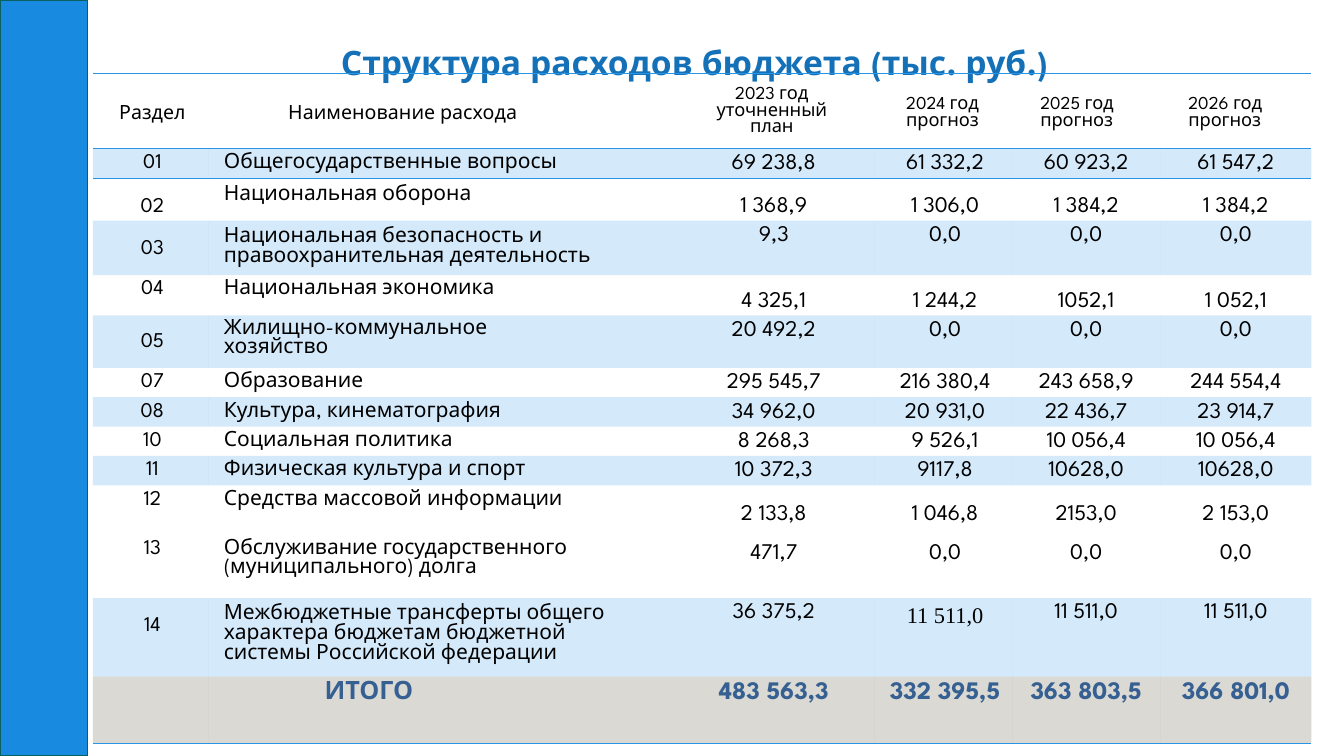
from lxml.etree import SubElement
from pptx import Presentation
from pptx.dml.color import RGBColor
from pptx.enum.shapes import MSO_SHAPE as SHAPE
from pptx.enum.text import MSO_ANCHOR as ANCHOR, PP_ALIGN as ALIGN
from pptx.oxml.ns import qn
from pptx.util import Cm, Pt

PANEL = RGBColor(0x18, 0x8A, 0xE0)
PANEL_EDGE = RGBColor(0x0A, 0x5F, 0x5F)
TITLE_BLUE = RGBColor(0x15, 0x71, 0xB7)
BAND = RGBColor(0x29, 0x95, 0xE7)
TOTAL_FILL = RGBColor(0x4A, 0x45, 0x2A)
TOTAL_TEXT = RGBColor(0x37, 0x60, 0x92)
BLACK = RGBColor(0, 0, 0)
FONT = "League Spartan"
NO_STYLE = "{2D5ABB26-0587-4C30-8999-92F81FD0307C}"

TITLE = "Структура расходов бюджета (тыс. руб.)"
COL_WIDTHS = [2.92, 11.71, 5.05, 3.48, 3.73, 3.81]
HEADER_HEIGHT, TOTAL_HEIGHT = 1.9, 1.68
HEADERS = [
    ("Раздел", dict(size=14, align=ALIGN.CENTER, top=0.81, left=0.08)),
    ("Наименование расхода", dict(size=14, top=0.81, left=2)),
    ("2023 год уточненный план",
     dict(size=13, align=ALIGN.CENTER, top=0.33, left=0.69, right=0.79)),
    ("2024 год\nпрогноз", dict(size=13, top=0.58, left=0.81)),
    ("2025 год\nпрогноз", dict(size=13, top=0.58, left=0.71)),
    ("2026 год\nпрогноз", dict(size=13, top=0.58, left=0.71)),
]
# height, top insets of section, name and values, section, name, values
ROWS = [
    (0.74, (0.13, 0.13, 0.13), "01", "Общегосударственные вопросы",
     ["69 238,8", "61 332,2", "60 923,2", "61 547,2"]),
    (1.07, (0.48, 0.18, 0.48), "02", "Национальная оборона",
     ["1 368,9", "1 306,0", "1 384,2", "1 384,2"]),
    (1.37, (0.48, 0.18, 0.13), "03",
     "Национальная безопасность и правоохранительная деятельность",
     ["9,3", "0,0", "0,0", "0,0"]),
    (1.02, (0.13, 0.13, 0.43), "04", "Национальная экономика",
     ["4 325,1", "1 244,2", "1052,1", "1 052,1"]),
    (1.32, (0.43, 0.1, 0.13), "05", "Жилищно-коммунальное хозяйство",
     ["20 492,2", "0,0", "0,0", "0,0"]),
    (0.74, (0.13, 0.13, 0.13), "07", "Образование",
     ["295 545,7", "216 380,4", "243 658,9", "244 554,4"]),
    (0.74, (0.13, 0.13, 0.13), "08", "Культура, кинематография",
     ["34 962,0", "20 931,0", "22 436,7", "23 914,7"]),
    (0.74, (0.13, 0.13, 0.13), "10", "Социальная политика",
     ["8 268,3", "9 526,1", "10 056,4", "10 056,4"]),
    (0.74, (0.13, 0.13, 0.13), "11", "Физическая культура и спорт",
     ["10 372,3", "9117,8", "10628,0", "10628,0"]),
    (2.84, (0.13, 0.13, 0.48), "12\n13",
     "Средства массовой информации\n"
     "Обслуживание государственного (муниципального) долга",
     ["2 133,8\n471,7", "1 046,8\n0,0", "2153,0\n0,0", "2 153,0\n0,0"]),
    (1.98, (0.48, 0.18, 0.13), "14",
     "Межбюджетные трансферты общего характера бюджетам бюджетной "
     "системы Российской федерации",
     ["36 375,2", "11 511,0", "11 511,0", "11 511,0"]),
]
NAME_RIGHT = {"05": 3}
VALUE_FONTS = {("14", 1): "Times New Roman"}
TOTAL_LABEL = "ИТОГО"
TOTALS = ["483 563,3", "332 395,5", "363 803,5", "366 801,0"]


def write(box, text, size=15, color=BLACK, bold=False, font=FONT,
          align=ALIGN.LEFT, gap=0, top=0.13, left=0, right=0):
    tf = box.text_frame
    target = box if hasattr(box, "margin_top") else tf
    target.margin_top, target.margin_bottom = Cm(top), 0
    target.margin_left, target.margin_right = Cm(left), Cm(right)
    target.vertical_anchor = ANCHOR.TOP
    tf.word_wrap = True
    for i, line in enumerate(text.split("\n")):
        p = tf.add_paragraph() if i else tf.paragraphs[0]
        p.alignment = align
        p.line_spacing = 1.0
        p.space_before = Pt(gap if i else 0)
        r = p.add_run()
        r.text = line
        r.font.name, r.font.size, r.font.bold = font, Pt(size), bold
        r.font.color.rgb = color


def tint(cell, color):
    cell.fill.solid()
    cell.fill.fore_color.rgb = color
    clr = cell.fill._xPr.find(qn("a:solidFill"))[0]
    SubElement(clr, qn("a:alpha"), val="20000")


def rule(cell, *sides):
    pr = cell._tc.get_or_add_tcPr()
    for i, side in enumerate(sides):
        ln = SubElement(pr, qn("a:" + side), w="12700")
        fill = SubElement(ln, qn("a:solidFill"))
        SubElement(fill, qn("a:srgbClr"), val=str(BAND))
        pr.remove(ln)
        pr.insert(i, ln)


def main():
    prs = Presentation()
    prs.slide_width, prs.slide_height = Cm(33.86), Cm(19.05)
    s = prs.slides.add_slide(prs.slide_layouts[5])

    panel = s.shapes.add_shape(SHAPE.RECTANGLE, 0, 0, Cm(2.21), prs.slide_height)
    panel.shadow.inherit = False
    panel.fill.solid()
    panel.fill.fore_color.rgb = PANEL
    panel.line.color.rgb = PANEL_EDGE
    panel.line.width = Pt(1)

    heights = [HEADER_HEIGHT] + [row[0] for row in ROWS] + [TOTAL_HEIGHT]
    frame = s.shapes.add_table(len(heights), len(COL_WIDTHS), Cm(2.34), Cm(1.85),
                               Cm(sum(COL_WIDTHS)), Cm(sum(heights)))
    frame._element.xpath(".//a:tableStyleId")[0].text = NO_STYLE
    table = frame.table
    table.first_row = table.horz_banding = False
    for col, width in zip(table.columns, COL_WIDTHS):
        col.width = Cm(width)
    for row, height in zip(table.rows, heights):
        row.height = Cm(height)

    for c, (text, fmt) in enumerate(HEADERS):
        write(table.cell(0, c), text, **fmt)
        rule(table.cell(0, c), "lnT", "lnB")

    for n, (_, tops, section, name, values) in enumerate(ROWS, 1):
        write(table.cell(n, 0), section, align=ALIGN.CENTER, gap=21,
              top=tops[0], left=0.08)
        write(table.cell(n, 1), name, gap=21, top=tops[1], left=0.38,
              right=NAME_RIGHT.get(section, 1.2))
        for c, value in enumerate(values):
            write(table.cell(n, c + 2), value, size=16, align=ALIGN.CENTER,
                  gap=13.5, top=tops[2], left=0.1 if c == 1 else 0,
                  font=VALUE_FONTS.get((section, c), FONT))
        for c in range(len(COL_WIDTHS)):
            cell = table.cell(n, c)
            if n % 2 or section == "14":
                tint(cell, BAND)
            if n == 1:
                rule(cell, "lnT", "lnB")

    last = len(heights) - 1
    total = dict(size=18, color=TOTAL_TEXT, bold=True)
    write(table.cell(last, 1), TOTAL_LABEL, left=2.92, **total)
    for c, value in enumerate(TOTALS):
        write(table.cell(last, c + 2), value, align=ALIGN.CENTER,
              left=0.1 if c == 1 else 0, **total)
    for c in range(len(COL_WIDTHS)):
        tint(table.cell(last, c), TOTAL_FILL)
        rule(table.cell(last, c), "lnB")

    title = s.shapes.title
    title.left, title.top, title.width, title.height = (
        Cm(8.56), Cm(0.86), Cm(18.39), Cm(1.07))
    write(title, TITLE, size=24, color=TITLE_BLUE, bold=True, top=0.2, left=0.03)
    prs.save("out.pptx")


if __name__ == "__main__":
    main()
